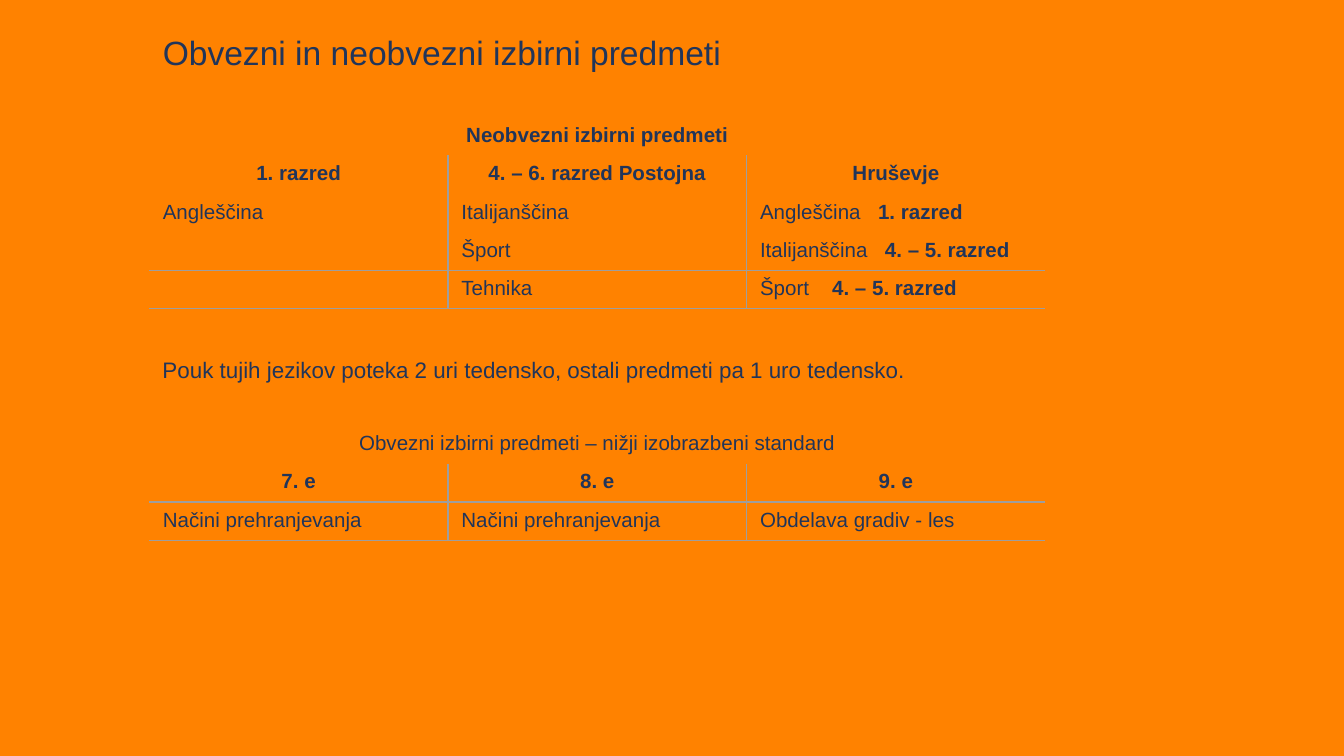
"""Build a slide with two tables of elective school subjects."""
from lxml.etree import SubElement
from pptx import Presentation
from pptx.dml.color import RGBColor
from pptx.enum.text import MSO_ANCHOR, PP_ALIGN
from pptx.oxml.ns import qn
from pptx.util import Pt

NAVY, GRAY, ORANGE = "21355A", "9E9E9E", "FF8200"
LEFT, TABLE_WIDTH, ROW_HEIGHT = 80, 480, 20.5
PLAIN_TABLE_STYLE = "{2D5ABB26-0587-4C30-8999-92F81FD0307C}"


def set_font(paragraph, size, bold=None):
    paragraph.font.name = "Arial"
    paragraph.font.size = Pt(size)
    paragraph.font.bold = bold
    paragraph.font.color.rgb = RGBColor.from_string(NAVY)


def add_border(cell, side):
    line = SubElement(cell._tc.get_or_add_tcPr(), qn(f"a:{side}"), w=str(Pt(0.75)))
    SubElement(SubElement(line, qn("a:solidFill")), qn("a:srgbClr"), val=GRAY)


presentation = Presentation()
presentation.slide_width, presentation.slide_height = Pt(720), Pt(405)
slide = presentation.slides.add_slide(presentation.slide_layouts[5])
slide.background.fill.solid()
slide.background.fill.fore_color.rgb = RGBColor.from_string(ORANGE)

title = slide.shapes.title
title.left, title.top, title.width, title.height = Pt(LEFT), Pt(11.5), Pt(668), Pt(36)
title.text_frame.text = "Obvezni in neobvezni izbirni predmeti"
title.text_frame.vertical_anchor = MSO_ANCHOR.TOP
title.text_frame.margin_top = Pt(5.4)
title.text_frame.paragraphs[0].alignment = PP_ALIGN.LEFT
set_font(title.text_frame.paragraphs[0], 18)

tables = [
    (62.8, True, "Neobvezni izbirni predmeti", [
        ["1. razred", "4. – 6. razred Postojna", "Hruševje"],
        ["Angleščina", "Italijanščina", ("Angleščina", "1. razred", 63.2)],
        ["", "Šport", ("Italijanščina", "4. – 5. razred", 66.9)],
        ["", "Tehnika", ("Šport", "4. – 5. razred", 38.6)],
    ]),
    (227.9, False, "Obvezni izbirni predmeti – nižji izobrazbeni standard", [
        ["7. e", "8. e", "9. e"],
        ["Načini prehranjevanja", "Načini prehranjevanja", "Obdelava gradiv - les"],
    ]),
]
for top, bold_heading, heading, subject_rows in tables:
    rows = [[heading, "", ""]] + subject_rows
    frame = slide.shapes.add_table(len(rows), 3, Pt(LEFT), Pt(top), Pt(TABLE_WIDTH), Pt(ROW_HEIGHT * len(rows)))
    table = frame.table
    table.first_row = table.horz_banding = False
    table._tbl.tblPr.find(qn("a:tableStyleId")).text = PLAIN_TABLE_STYLE
    table.cell(0, 0).merge(table.cell(0, 2))
    for row_index, row in enumerate(rows):
        table.rows[row_index].height = Pt(ROW_HEIGHT)
        for column_index, content in enumerate(row):
            cell = table.cell(row_index, column_index)
            borders = {
                "lnL": row_index > 0 and column_index > 0,
                "lnR": row_index > 0 and column_index < 2,
                "lnT": row_index == len(rows) - 1,
                "lnB": row_index >= len(rows) - 2,
            }
            for side, visible in borders.items():
                if visible:
                    add_border(cell, side)
            cell.fill.background()
            paragraph = cell.text_frame.paragraphs[0]
            if row_index < 2:
                paragraph.alignment = PP_ALIGN.CENTER
            if isinstance(content, tuple):
                subject, grade, tab_position = content
                tabs = SubElement(paragraph._p.get_or_add_pPr(), qn("a:tabLst"))
                SubElement(tabs, qn("a:tab"), pos=str(Pt(tab_position)), algn="l")
                paragraph.add_run().text = subject + "\t"
                grade_run = paragraph.add_run()
                grade_run.text = grade
                grade_run.font.bold = True
            elif content:
                paragraph.add_run().text = content
            else:
                SubElement(paragraph._p, qn("a:endParaRPr"), sz="1100")
            set_font(paragraph, 11, bold_heading if row_index == 0 else row_index == 1)

note = slide.shapes.add_textbox(Pt(LEFT), Pt(181.4), Pt(654), Pt(25.2))
note.text_frame.word_wrap = True
note.text_frame.text = "Pouk tujih jezikov poteka 2 uri tedensko, ostali predmeti pa 1 uro tedensko."
paragraph = note.text_frame.paragraphs[0]
paragraph.alignment = PP_ALIGN.JUSTIFY
paragraph.line_spacing = Pt(20)
set_font(paragraph, 12)

presentation.save("out.pptx")
